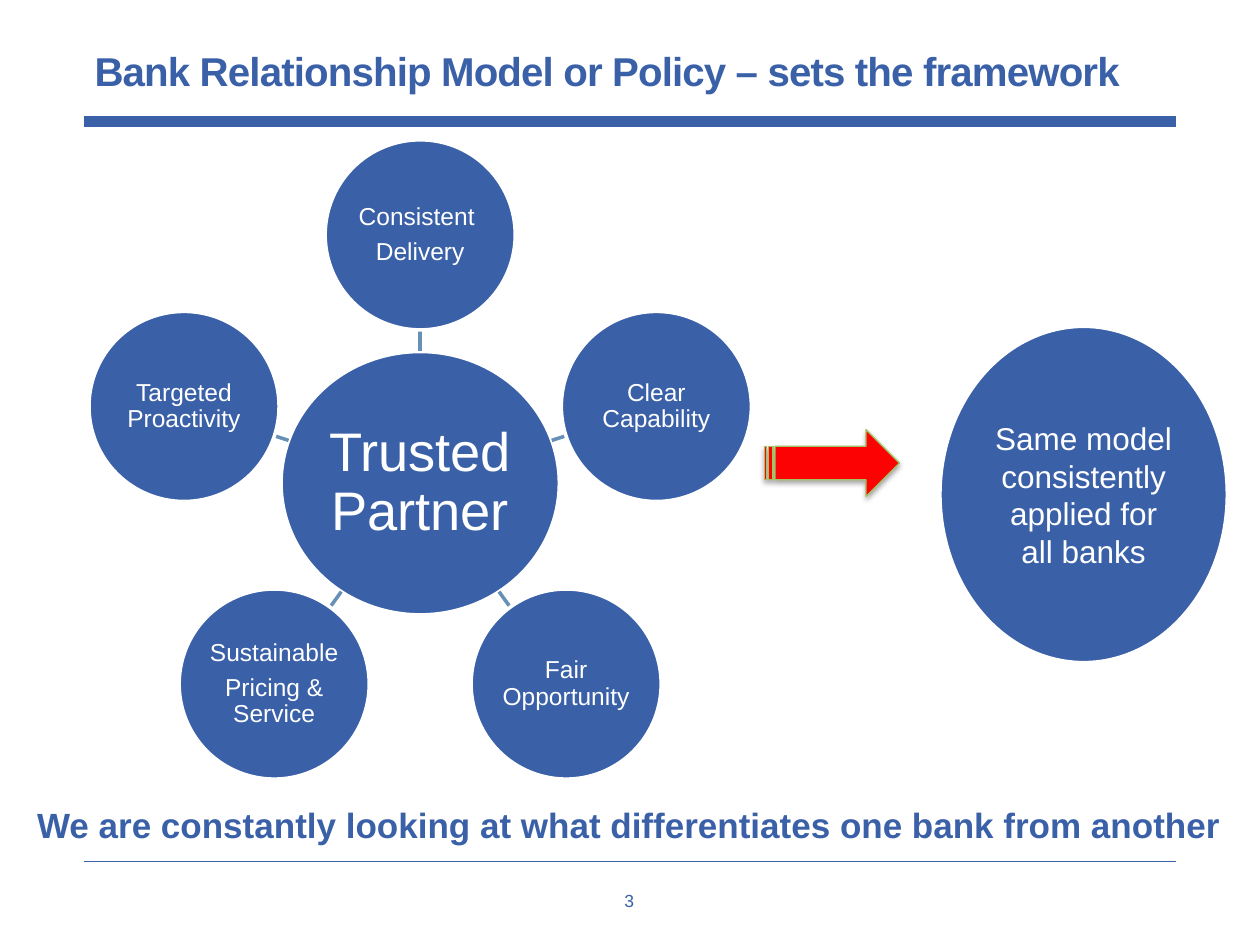
import math

from lxml import etree
from pptx import Presentation
from pptx.dml.color import RGBColor
from pptx.enum import shapes, text
from pptx.oxml import ns
from pptx.util import Pt

COLORS = {
    "blue": "3A60A8",
    "link": "6690B6",
    "white": "FFFFFF",
    "red": "FC0202",
    "green": "A2C263",
    "black": "000000",
}
FONT = "Arial"
HUB_CENTER = (240.1, 276.1)
HUB_SIZE = (159, 150.5)
ORBIT = 141.9
SATELLITE = 108.6
SATELLITES = [
    ["Consistent ", "Delivery"],
    ["Clear Capability"],
    ["Fair Opportunity"],
    ["Sustainable", "Pricing & Service"],
    ["Targeted Proactivity"],
]


def rgb(name):
    return RGBColor.from_string(COLORS[name])


def write(shape, lines, size, color="white", bold=False, inset=0.0,
          align=text.PP_ALIGN.CENTER, spacing=None, gap=0.0):
    """Fill a shape with centred paragraphs, gap points apart."""
    frame = shape.text_frame
    frame.word_wrap = True
    frame.vertical_anchor = text.MSO_ANCHOR.MIDDLE
    frame.margin_left = frame.margin_right = Pt(inset)
    frame.margin_top = frame.margin_bottom = Pt(inset)
    for index, line in enumerate(lines):
        para = frame.add_paragraph() if index else frame.paragraphs[0]
        para.alignment = align
        para.line_spacing = spacing
        para.space_before = Pt(gap if index else 0)
        span = para.add_run()
        span.text = line
        span.font.name = FONT
        span.font.size = Pt(size)
        span.font.bold = bold
        span.font.color.rgb = rgb(color)
    return frame


def add_label(page, left, top, width, height, line, size, **style):
    box = page.shapes.add_textbox(Pt(left), Pt(top), Pt(width), Pt(height))
    return write(box, [line], size, color="blue", **style)


def add_line(page, start, end, color, width):
    line = page.shapes.add_connector(
        shapes.MSO_CONNECTOR.STRAIGHT, *(Pt(value) for value in (*start, *end)))
    line.line.color.rgb = rgb(color)
    line.line.width = Pt(width)
    etree.SubElement(line._element.spPr, ns.qn("a:effectLst"))


def add_shape(page, kind, left, top, width, height, fill, outline, weight):
    shape = page.shapes.add_shape(kind, Pt(left), Pt(top), Pt(width), Pt(height))
    shape.shadow.inherit = False
    shape.fill.solid()
    shape.fill.fore_color.rgb = rgb(fill)
    shape.line.color.rgb = rgb(outline)
    shape.line.width = Pt(weight)
    return shape


def add_ellipse(page, center, size, lines, font_size, **style):
    (x, y), (width, height) = center, size
    ellipse = add_shape(page, shapes.MSO_SHAPE.OVAL, x - width / 2, y - height / 2,
                        width, height, "blue", "white", 2)
    write(ellipse, lines, font_size, **style)


def add_wheel(page):
    """Hub with satellites at equal angles, clockwise from the top."""
    add_ellipse(page, HUB_CENTER, HUB_SIZE, ["Trusted Partner"], 31,
                inset=1.5, spacing=0.9)
    half_width, half_height = (side / 2 for side in HUB_SIZE)
    for index, lines in enumerate(SATELLITES):
        angle = math.tau * index / len(SATELLITES) - math.pi / 2
        cos, sin = math.cos(angle), math.sin(angle)

        def at(distance):
            return HUB_CENTER[0] + distance * cos, HUB_CENTER[1] + distance * sin

        hub_edge = 1 / math.hypot(cos / half_width, sin / half_height)
        add_line(page, at(hub_edge), at(ORBIT - SATELLITE / 2), "link", 2)
        add_ellipse(page, at(ORBIT), (SATELLITE, SATELLITE), lines, 14,
                    inset=0.7, spacing=0.9, gap=5)


def add_arrow(page):
    arrow = add_shape(page, shapes.MSO_SHAPE.STRIPED_RIGHT_ARROW,
                      437, 245.5, 77, 38.2, "red", "green", 0.75)
    effects = arrow._element.spPr.find(ns.qn("a:effectLst"))
    shadow = etree.SubElement(effects, ns.qn("a:outerShdw"), blurRad=str(Pt(3.1)),
                              dist=str(Pt(1.8)), dir="5400000", rotWithShape="0")
    color = etree.SubElement(shadow, ns.qn("a:srgbClr"), val=COLORS["black"])
    etree.SubElement(color, ns.qn("a:alpha"), val="35000")


def main():
    deck = Presentation()
    deck.slide_width, deck.slide_height = Pt(720), Pt(540)
    page = deck.slides.add_slide(deck.slide_layouts[6])

    add_line(page, (48, 492.3), (672, 492.3), "blue", 0.57)
    add_line(page, (48, 69.4), (672, 69.4), "blue", 6)
    title = add_label(page, 54, 30, 625, 24.5,
                      "Bank Relationship Model or Policy – sets the framework", 23,
                      bold=True, align=text.PP_ALIGN.LEFT, spacing=Pt(24))
    title.paragraphs[0].runs[0].font._element.set("spc", "-50")
    add_label(page, 345.6, 508.3, 28, 12.2, "3", 10, spacing=Pt(12))

    add_wheel(page)
    add_ellipse(page, (619.2, 282.6), (164.2, 192.2),
                ["Same model consistently applied for all banks"], 18, inset=5.5)
    add_arrow(page)
    add_label(page, 12, 455.3, 695, 31.7,
              "We are constantly looking at what differentiates one bank from another",
              20, bold=True)
    deck.save("out.pptx")


if __name__ == "__main__":
    main()
